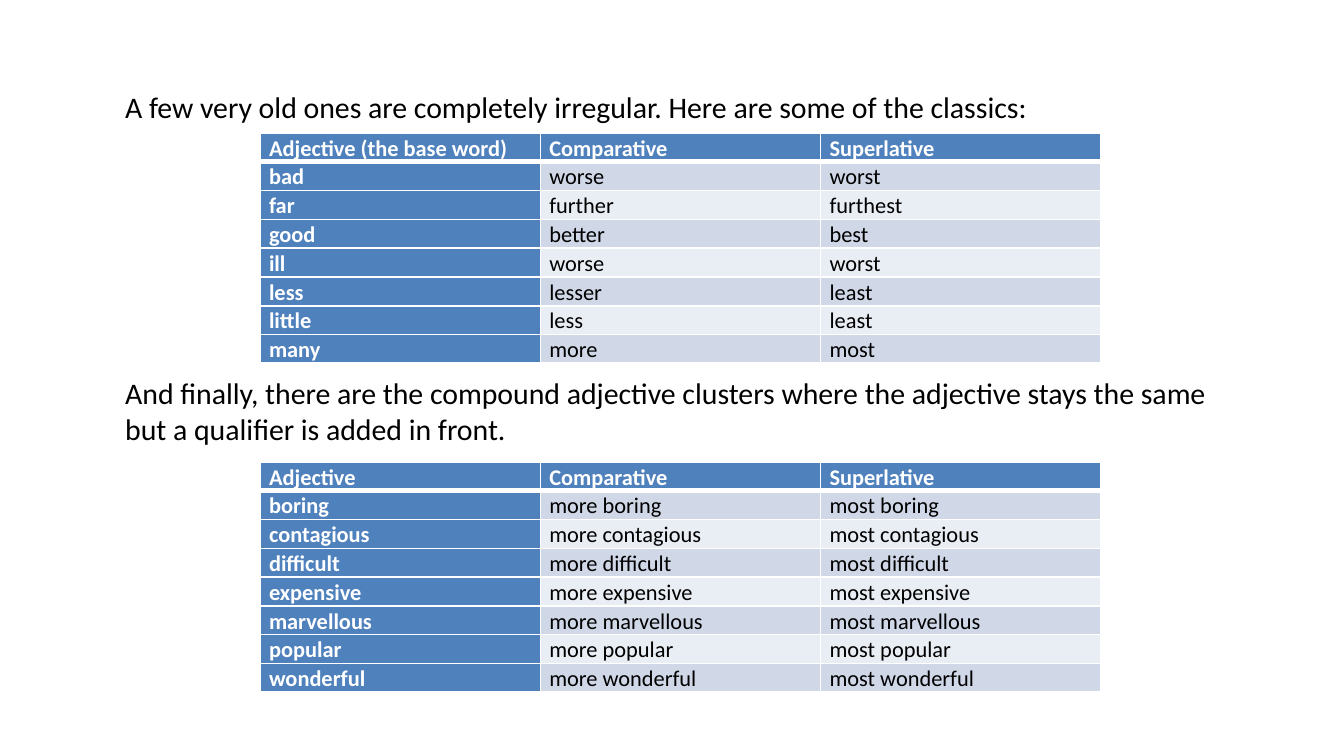
"""Build a slide with two tables of adjective comparison."""
from dataclasses import dataclass

from lxml import etree
from pptx import Presentation
from pptx import util as u
from pptx.dml.color import RGBColor
from pptx.oxml.ns import qn

SCALE = 914400 / 134.4
FONT = "Calibri"
WHITE, BLACK, BLUE = "FFFFFF", "000000", "4F81BD"
BANDS = ("D0D8E8", "E9EDF4")


@dataclass
class Grid:
    top: int
    head: str
    rows: list[tuple[str, str, str]]


def px(n: int) -> u.Emu:
    return u.Emu(round(n * SCALE))


def rgb(code: str) -> RGBColor:
    return RGBColor.from_string(code)


def add_run(par, words: str, size: int, color: str, bold: bool = False) -> None:
    run = par.add_run()
    run.text = words
    font = run.font
    font.name, font.size, font.bold = FONT, u.Pt(size), bold
    font.color.rgb = rgb(color)


def add_edge(cell, side: str, width: int) -> None:
    line = etree.SubElement(cell._tc.get_or_add_tcPr(), qn(f"a:ln{side}"), w=str(u.Pt(width)))
    fill = etree.SubElement(line, qn("a:solidFill"))
    etree.SubElement(fill, qn("a:srgbClr"), val=WHITE)


def fill_cell(cell, words: str, row: int, col: int) -> None:
    head = row == 0 or col == 0
    cell.margin_left = cell.margin_right = px(9)
    cell.margin_top = cell.margin_bottom = 0
    edges = {"L": 1, "R": 1, "T": 3 if row == 1 else 1, "B": 3 if row == 0 else 1}
    for side, width in edges.items():
        add_edge(cell, side, width)
    cell.fill.solid()
    cell.fill.fore_color.rgb = rgb(BLUE if head else BANDS[(row - 1) % 2])
    par = cell.text_frame.paragraphs[0]
    par.line_spacing = 1.07
    add_run(par, words, 12, WHITE if head else BLACK, head)


def add_grid(slide, grid: Grid) -> None:
    rows = [(grid.head, "Comparative", "Superlative"), *grid.rows]
    frame = slide.shapes.add_table(len(rows), 3, px(260), px(grid.top), px(841), px(230))
    for r, row in enumerate(rows):
        for c, words in enumerate(row):
            fill_cell(frame.table.cell(r, c), words, r, c)


def add_prose(slide, lines: list[str], gap: int) -> None:
    box = slide.shapes.add_textbox(px(112), px(82), px(1133), px(411))
    frame = box.text_frame
    frame.word_wrap = True
    for i, line in enumerate(lines):
        par = frame.add_paragraph() if i else frame.paragraphs[0]
        if i:
            par.space_before = u.Pt(gap)
        add_run(par, line, 16, BLACK)


PROSE = [
    "A few very old ones are completely irregular. Here are some of the classics:",
    "And finally, there are the compound adjective clusters where the adjective "
    "stays the same but a qualifier is added in front.",
]
LONG = ["boring", "contagious", "difficult", "expensive", "marvellous", "popular", "wonderful"]
GRIDS = [
    Grid(133, "Adjective (the base word)", [
        ("bad", "worse", "worst"),
        ("far", "further", "furthest"),
        ("good", "better", "best"),
        ("ill", "worse", "worst"),
        ("less", "lesser", "least"),
        ("little", "less", "least"),
        ("many", "more", "most"),
    ]),
    Grid(462, "Adjective", [(w, f"more {w}", f"most {w}") for w in LONG]),
]


def main() -> None:
    deck = Presentation()
    deck.slide_width, deck.slide_height = px(1344), px(756)
    slide = deck.slides.add_slide(deck.slide_layouts[6])
    add_prose(slide, PROSE, 134)
    for grid in GRIDS:
        add_grid(slide, grid)
    deck.save("out.pptx")


if __name__ == "__main__":
    main()
